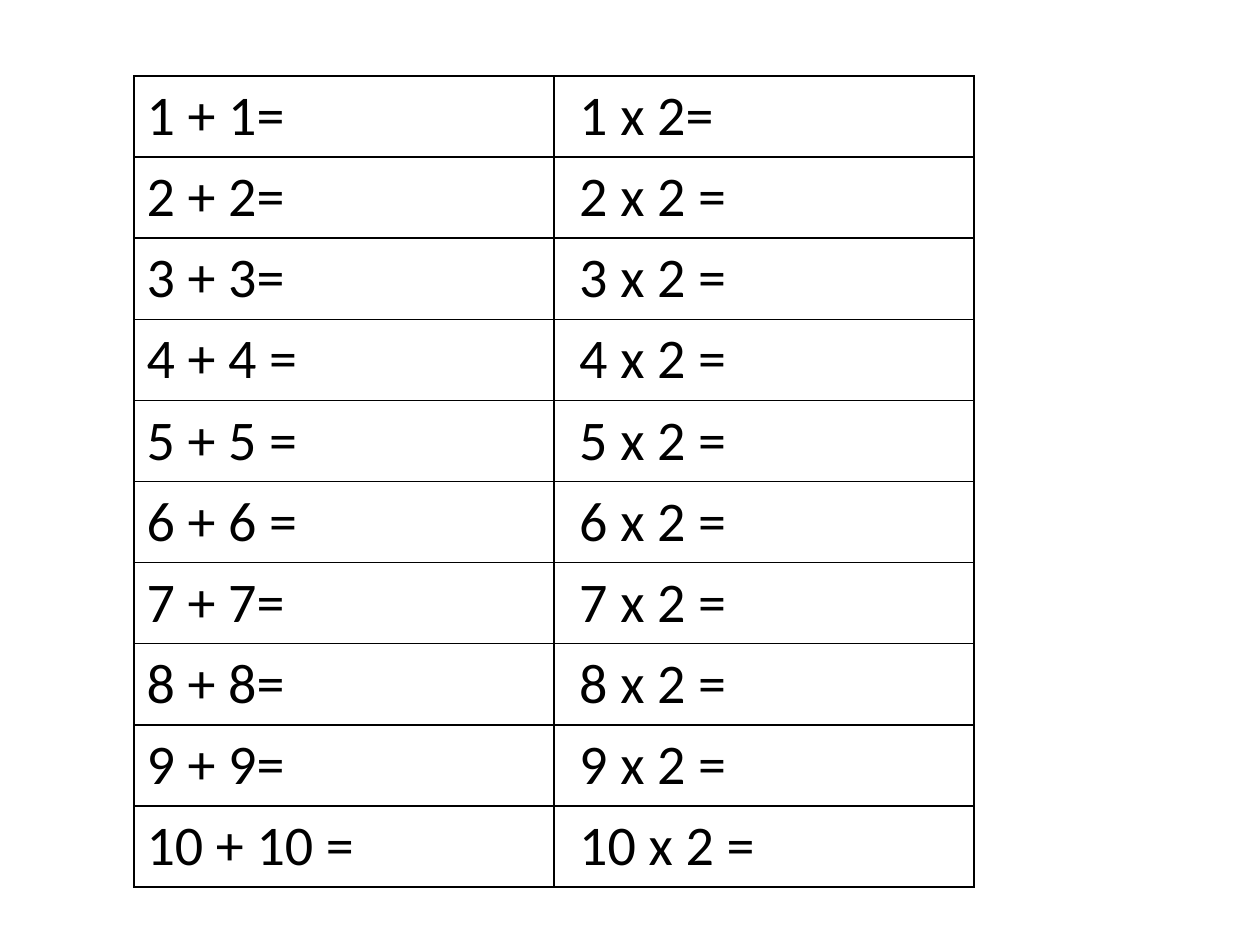
from lxml import etree
from pptx import Presentation
from pptx.dml.color import RGBColor
from pptx.oxml.ns import qn
from pptx.util import Emu, Pt

PX = 914400 // 126
BLACK = "000000"
FONT = {"name": "Calibri", "size": Pt(32), "bold": False}
LEFT, TOP, COL_W, ROW_H = 134, 76, 420, 81
SPACED_SUMS = {4, 5, 6, 10}  # sums written with a space before "="


def px(n):
    return Emu(n * PX)


def color(value):
    return RGBColor.from_string(value)


def set_borders(cell, value, width):
    tcPr = cell._tc.get_or_add_tcPr()
    for i, side in enumerate(("a:lnL", "a:lnR", "a:lnT", "a:lnB")):
        ln = etree.Element(qn(side), w=str(width))
        fill = etree.SubElement(ln, qn("a:solidFill"))
        etree.SubElement(fill, qn("a:srgbClr"), val=value)
        tcPr.insert(i, ln)  # borders come before the fill


def write_cell(cell, text):
    cell.fill.background()
    set_borders(cell, BLACK, Pt(1))
    p = cell.text_frame.paragraphs[0]
    r = p.add_run()
    r.text = text
    for name, value in FONT.items():
        setattr(r.font, name, value)
    r.font.color.rgb = color(BLACK)


def add_grid(s, rows):
    cols = len(rows[0])
    table = s.shapes.add_table(len(rows), cols, px(LEFT), px(TOP),
                               px(COL_W * cols), px(ROW_H * len(rows))).table
    table.first_row = table.horz_banding = False
    for column in table.columns:
        column.width = px(COL_W)
    for i, row in enumerate(rows):
        table.rows[i].height = px(ROW_H)
        for j, text in enumerate(row):
            write_cell(table.cell(i, j), text)


def exercise(n):
    sum_gap = " " if n in SPACED_SUMS else ""
    product_gap = " " if n > 1 else ""
    return f"{n} + {n}{sum_gap}=", f" {n} х 2{product_gap}="


def main():
    prs = Presentation()
    prs.slide_width, prs.slide_height = px(1260), px(945)
    s = prs.slides.add_slide(prs.slide_layouts[6])

    # Doubling sums beside the matching products
    add_grid(s, [exercise(n) for n in range(1, 11)])
    prs.save("out.pptx")


if __name__ == "__main__":
    main()
